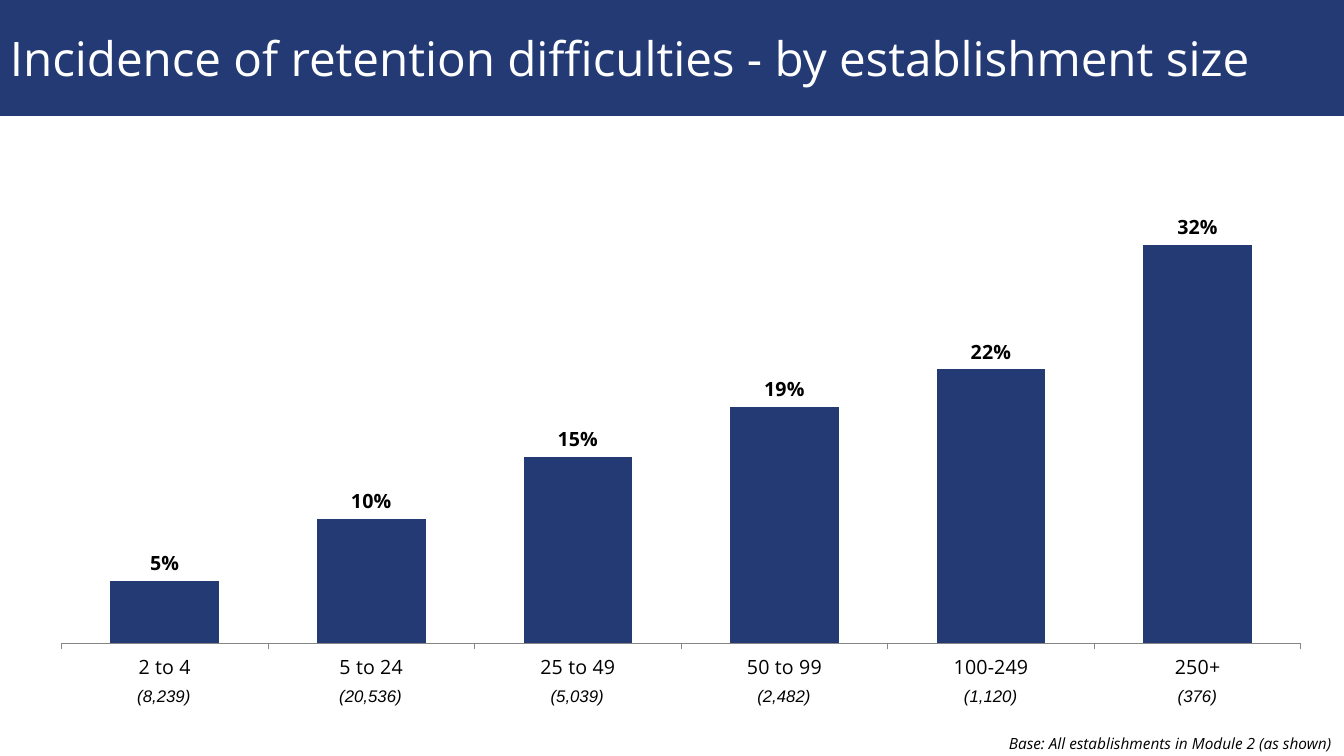
from dataclasses import dataclass

from lxml.etree import SubElement
from pptx import Presentation
from pptx.chart.data import CategoryChartData
from pptx.dml.color import RGBColor
from pptx.enum.chart import XL_CHART_TYPE as ChartType
from pptx.enum.chart import XL_LABEL_POSITION as LabelPos
from pptx.enum.chart import XL_TICK_MARK as Tick
from pptx.enum.shapes import MSO_SHAPE as Shape
from pptx.enum.text import MSO_ANCHOR as Anchor
from pptx.enum.text import PP_ALIGN as Align
from pptx.oxml.ns import qn
from pptx.slide import Slide
from pptx.util import Inches, Pt

NAVY = RGBColor(0x23, 0x3A, 0x75)
WHITE = RGBColor(0xFF, 0xFF, 0xFF)
BLACK = RGBColor(0, 0, 0)
GREY = RGBColor(0x86, 0x86, 0x86)
FONT = "Open Sans"
BASE_FONT = "Arial"


@dataclass
class SizeBand:
    label: str
    share: float
    base: str


@dataclass
class Note:
    text: str
    left: float
    top: float
    width: float
    height: float
    size: int
    font: str
    align: Align
    inset_x: float = 0.1
    inset_y: float = 0.05


BANDS = [
    SizeBand("2 to 4", 0.05, "(8,239)"),
    SizeBand("5 to 24", 0.10, "(20,536)"),
    SizeBand("25 to 49", 0.15, "(5,039)"),
    SizeBand("50 to 99", 0.19, "(2,482)"),
    SizeBand("100-249", 0.22, "(1,120)"),
    SizeBand("250+", 0.32, "(376)"),
]


def add_title(slide: Slide, text: str) -> None:
    sp = slide.shapes.add_shape(Shape.RECTANGLE, 0, 0, Inches(13.33), Inches(1.15))
    sp.shadow.inherit = False
    sp.fill.solid()
    sp.fill.fore_color.rgb = NAVY
    sp.line.fill.background()
    tf = sp.text_frame
    tf.word_wrap = True
    tf.vertical_anchor = Anchor.MIDDLE
    p = tf.paragraphs[0]
    p.alignment = Align.LEFT
    r = p.add_run()
    r.text = text
    r.font.name, r.font.size = FONT, Pt(34)
    r.font.color.rgb = WHITE


def add_note(slide: Slide, note: Note) -> None:
    sp = slide.shapes.add_textbox(Inches(note.left), Inches(note.top),
                                  Inches(note.width), Inches(note.height))
    tf = sp.text_frame
    tf.word_wrap = True
    tf.margin_left = tf.margin_right = Inches(note.inset_x)
    tf.margin_top = tf.margin_bottom = Inches(note.inset_y)
    p = tf.paragraphs[0]
    p.alignment = note.align
    r = p.add_run()
    r.text = note.text
    r.font.name, r.font.size, r.font.italic = note.font, Pt(note.size), True
    r.font.color.rgb = BLACK


def add_bar_chart(slide: Slide, bands: list[SizeBand]) -> None:
    data = CategoryChartData(number_format="0%")
    data.categories = [band.label for band in bands]
    data.add_series("Series 1", [band.share for band in bands])
    chart = slide.shapes.add_chart(ChartType.COLUMN_CLUSTERED, Inches(0.43), Inches(2.06),
                                   Inches(12.86), Inches(4.82), data).chart
    chart.has_legend = chart.has_title = False
    chart.font.name, chart.font.size = FONT, Pt(18)
    chart.font.color.rgb = BLACK

    # Axes
    cat_axis, val_axis = chart.category_axis, chart.value_axis
    cat_axis.major_tick_mark = Tick.OUTSIDE
    cat_axis.tick_labels.font.size = Pt(14)
    cat_axis.tick_labels.font.color.rgb = BLACK
    cat_axis.format.line.color.rgb = GREY
    cat_axis.format.line.width = Pt(0.75)
    val_axis.visible = False
    val_axis.has_major_gridlines = False
    val_axis.minimum_scale, val_axis.maximum_scale = 0, 0.35

    # Bars and value labels
    plot = chart.plots[0]
    plot.gap_width = 90
    plot.vary_by_categories = False
    bars = plot.series[0]
    bars.format.fill.solid()
    bars.format.fill.fore_color.rgb = NAVY
    labels = bars.data_labels
    labels.show_value = True
    labels.position = LabelPos.OUTSIDE_END
    labels.number_format, labels.number_format_is_linked = "0%", False
    labels.font.name, labels.font.size, labels.font.bold = FONT, Pt(14), True
    labels.font.color.rgb = BLACK

    # Fixed inner plot area
    area = plot._element.getparent()
    layout = area.find(qn("c:layout"))
    if layout is None:
        layout = SubElement(area, qn("c:layout"))
        area.insert(0, layout)
    manual = SubElement(layout, qn("c:manualLayout"))
    for tag, val in (("layoutTarget", "inner"), ("xMode", "edge"), ("yMode", "edge"),
                     ("x", "0.014"), ("y", "0"), ("w", "0.956"), ("h", "0.897")):
        SubElement(manual, qn(f"c:{tag}")).set("val", val)


def main() -> None:
    prs = Presentation()
    prs.slide_width, prs.slide_height = Inches(13.33), Inches(7.5)
    slide = prs.slides.add_slide(prs.slide_layouts[6])

    add_title(slide, "Incidence of retention difficulties - by establishment size")
    add_bar_chart(slide, BANDS)
    add_note(slide, Note("Base: All establishments in Module 2 (as shown)",
                         5.32, 7.21, 8.02, 0.32, 11, FONT, Align.RIGHT, 0.13, 0.07))

    # Base sizes under the categories
    for i, band in enumerate(BANDS):
        add_note(slide, Note(band.base, 1.18 + 2.05 * i, 6.75, 0.89, 0.3,
                             12, BASE_FONT, Align.CENTER))

    prs.save("out.pptx")


if __name__ == "__main__":
    main()
